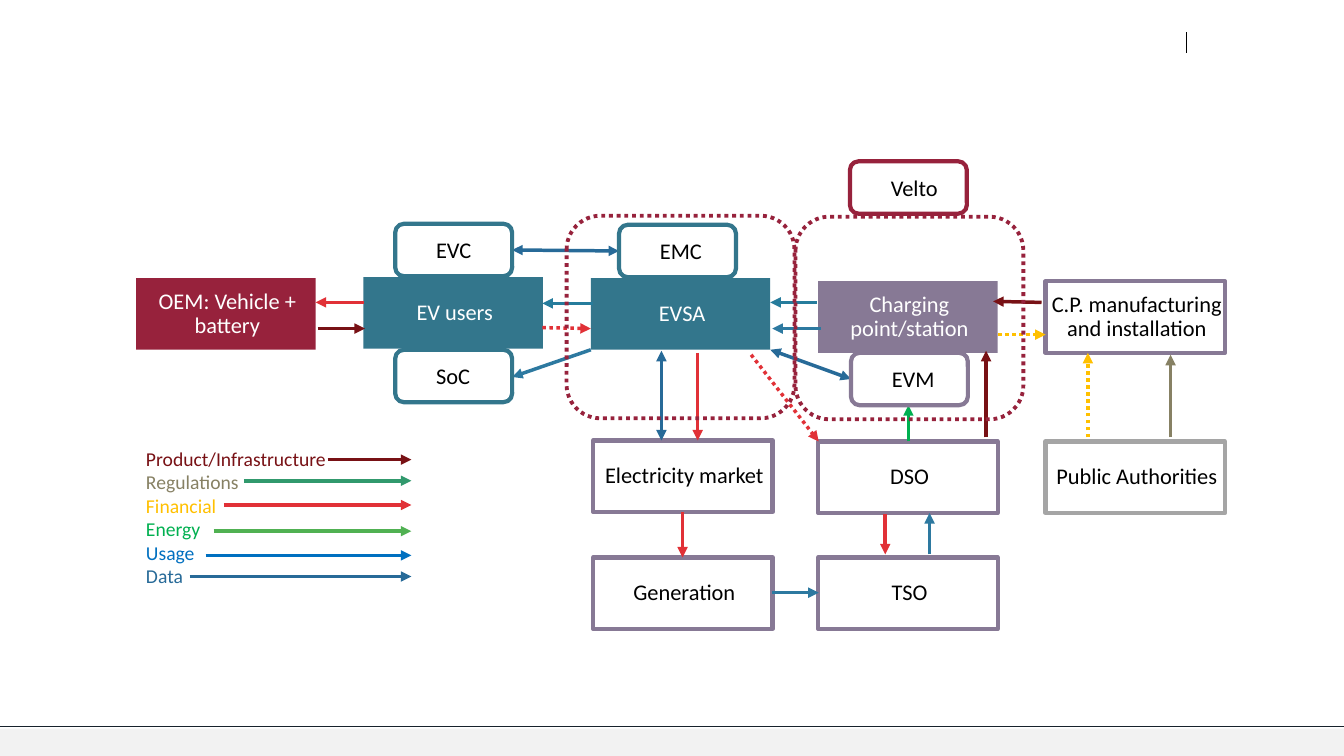
from lxml.etree import SubElement
from pptx import Presentation
from pptx.dml.color import RGBColor
from pptx.enum.dml import MSO_LINE
from pptx.enum.shapes import MSO_CONNECTOR, MSO_SHAPE
from pptx.enum.text import MSO_ANCHOR, MSO_AUTO_SIZE, PP_ALIGN
from pptx.oxml.ns import qn
from pptx.util import Inches, Pt

BLACK = RGBColor(0x00, 0x00, 0x00)
WHITE = RGBColor(0xFF, 0xFF, 0xFF)
PALE = RGBColor(0xF2, 0xF2, 0xF2)
NAVY = RGBColor(0x16, 0x21, 0x2B)
CRIMSON = RGBColor(0x97, 0x22, 0x3C)
TEAL = RGBColor(0x33, 0x76, 0x8C)
PURPLE = RGBColor(0x87, 0x79, 0x95)
GRAY = RGBColor(0xA5, 0xA5, 0xA5)
MAROON = RGBColor(0x78, 0x11, 0x15)
OLIVE = RGBColor(0x87, 0x81, 0x64)
YELLOW = RGBColor(0xFF, 0xC0, 0x00)
RED = RGBColor(0xE1, 0x31, 0x37)
GREEN = RGBColor(0x00, 0xB0, 0x50)
LEAF = RGBColor(0x50, 0xB1, 0x52)
JADE = RGBColor(0x31, 0x99, 0x6D)
BLUE = RGBColor(0x00, 0x70, 0xC0)
DATA_BLUE = RGBColor(0x27, 0x6A, 0x98)
STEEL = RGBColor(0x2D, 0x79, 0xA0)
SEA = RGBColor(0x26, 0x7C, 0x9C)

SLIDE_WIDTH, SLIDE_HEIGHT = Inches(13.33), Inches(7.5)
COLUMNS, ROWS = 133.3, 75
FIRST_ACTOR, ACTOR_PITCH = 13.5, 22.55
ACTOR_WIDTH, ACTOR_HEIGHT = 17.8, 7.1

# (text, place in the row of actors, top, fill, line)
ACTORS = [
    ("OEM: Vehicle + battery", 0, 27.6, CRIMSON, None),
    ("EV users", 1, 27.5, TEAL, None),
    ("EVSA", 2, 27.6, TEAL, None),
    ("Charging point/station", 3, 27.9, PURPLE, None),
    ("C.P. manufacturing and installation", 4, 27.9, None, PURPLE),
    ("Electricity market", 2.01, 43.7, None, PURPLE),
    ("DSO", 3, 43.8, None, PURPLE),
    ("Public Authorities", 4, 43.8, None, GRAY),
    ("Generation", 2.01, 55.3, None, PURPLE),
    ("TSO", 3, 55.3, None, PURPLE),
]
BADGES = [
    ("EVC", 39.2, 22.2, TEAL),
    ("SoC", 39.2, 34.7, TEAL),
    ("EMC", 61.4, 22.3, TEAL),
    ("EVM", 84.4, 35, PURPLE),
    ("Velto", 84.3, 16, CRIMSON),
]
FLOWS = [
    (RED, (36.1, 30), (31.3, 30)),
    (RED, (69.2, 35), (69.2, 43.7)),
    (RED, (67.7, 50.8), (67.7, 55.3)),
    (RED, (87.8, 51), (87.8, 55)),
    (MAROON, (31.5, 32.6), (36.2, 32.6)),
    (MAROON, (103.3, 30), (98.5, 29.9)),
    (MAROON, (97.8, 43.4), (97.8, 34.8)),
    (SEA, (58.8, 30.1), (53.8, 30.1)),
    (SEA, (81, 30), (76.4, 30)),
    (STEEL, (81.4, 32.6), (76.6, 32.6)),
    (STEEL, (58.6, 34.7), (50.8, 37.4)),
    (STEEL, (76.6, 58.8), (81.2, 58.8)),
    (STEEL, (92.2, 55), (92.2, 50.9)),
    (GREEN, (90.1, 43.8), (90.1, 40.2)),
    (OLIVE, (116.1, 43.4), (116.1, 35.2)),
]
DOTTED_FLOWS = [
    (RED, (53.8, 32.5), (58.6, 32.6)),
    (RED, (74.5, 35.2), (81.2, 43.8)),
    (YELLOW, (99, 33.2), (103.7, 33.2)),
    (YELLOW, (107.9, 43.4), (107.9, 35)),
]
EXCHANGES = [
    (DATA_BLUE, (50.8, 24.8), (61.4, 24.9)),
    (DATA_BLUE, (65.6, 43.7), (65.6, 34.8)),
    (DATA_BLUE, (76.4, 34.7), (84.4, 37.6)),
]
# (text, text colour, arrow colour, arrow start, arrow row)
LEGEND = [
    ("Product/Infrastructure", MAROON, MAROON, 32.5, 45.6),
    ("Regulations", OLIVE, JADE, 24.2, 47.7),
    ("Financial", YELLOW, RED, 22.2, 50.1),
    ("Energy", GREEN, LEAF, 21.2, 52.7),
    ("Usage", BLUE, BLUE, 20.4, 55.1),
    ("Data", DATA_BLUE, DATA_BLUE, 18.8, 57.2),
]


class Diagram:
    font_name = "Calibri"
    text_size = Pt(16)
    legend_size = Pt(14)
    outline_width = Pt(3)
    flow_width = Pt(2.5)

    def __init__(self, slide):
        self.slide = slide

    def across(self, columns):
        return round(SLIDE_WIDTH * columns / COLUMNS)

    def down(self, rows):
        return round(SLIDE_HEIGHT * rows / ROWS)

    def frame(self, left, top, width, height):
        return self.across(left), self.down(top), self.across(width), self.down(height)

    def format_runs(self, paragraph, size, color):
        for run in paragraph.runs:
            run.font.name = self.font_name
            run.font.size = size
            run.font.color.rgb = color

    def outline(self, kind, place, fill=None, line=None, width=outline_width):
        shape = self.slide.shapes.add_shape(kind, *self.frame(*place))
        shape.shadow.inherit = False
        if fill is None:
            shape.fill.background()
        else:
            shape.fill.solid()
            shape.fill.fore_color.rgb = fill
        if line is None:
            shape.line.fill.background()
        else:
            shape.line.color.rgb = line
            shape.line.width = width
        return shape

    def label(self, shape, text, color, alignment, left_margin):
        frame = shape.text_frame
        frame.word_wrap = True
        frame.vertical_anchor = MSO_ANCHOR.MIDDLE
        frame.margin_left, frame.margin_right = Inches(left_margin), Inches(0.02)
        frame.margin_top = frame.margin_bottom = Inches(0.04)
        frame.text = text
        paragraph = frame.paragraphs[0]
        paragraph.alignment = alignment
        self.format_runs(paragraph, self.text_size, color)
        return paragraph

    def actor(self, text, position, top, fill, line):
        left = FIRST_ACTOR + ACTOR_PITCH * position
        place = (left, top, ACTOR_WIDTH, ACTOR_HEIGHT)
        shape = self.outline(MSO_SHAPE.RECTANGLE, place, fill, line)
        paragraph = self.label(shape, text, WHITE if fill else BLACK, PP_ALIGN.CENTER, 0.05)
        paragraph.line_spacing = 0.9
        paragraph.space_after = Pt(7)

    def badge(self, text, left, top, line):
        shape = self.outline(MSO_SHAPE.ROUNDED_RECTANGLE, (left, top, 11.6, 5.2), None, line)
        self.label(shape, text, BLACK, PP_ALIGN.LEFT, 0.38)

    def group(self, left, top):
        place = (left, top, 22.6, 20.1)
        shape = self.outline(MSO_SHAPE.ROUNDED_RECTANGLE, place, None, CRIMSON, Pt(2.75))
        shape.line.dash_style = MSO_LINE.ROUND_DOT

    def line(self, color, start, end, width=flow_width, ends=(), dotted=False):
        connector = self.slide.shapes.add_connector(
            MSO_CONNECTOR.STRAIGHT,
            self.across(start[0]), self.down(start[1]),
            self.across(end[0]), self.down(end[1]))
        connector.line.color.rgb = color
        connector.line.width = width
        if dotted:
            connector.line.dash_style = MSO_LINE.ROUND_DOT
        properties = connector.element.spPr
        for end_name in ends:
            SubElement(properties.find(qn("a:ln")), qn(end_name), type="triangle")
        SubElement(properties, qn("a:effectLst"))

    def flow(self, color, start, end, dotted=False):
        self.line(color, start, end, ends=("a:tailEnd",), dotted=dotted)

    def exchange(self, color, start, end):
        self.line(color, start, end, ends=("a:headEnd", "a:tailEnd"))

    def legend(self, entries):
        shape = self.slide.shapes.add_textbox(*self.frame(13.5, 43.8, 20, 15.1))
        frame = shape.text_frame
        frame.word_wrap = True
        frame.auto_size = MSO_AUTO_SIZE.SHAPE_TO_FIT_TEXT
        frame.text = "\n".join(entry[0] for entry in entries)
        for paragraph, entry in zip(frame.paragraphs, entries):
            text, text_color, arrow_color, start, row = entry
            self.format_runs(paragraph, self.legend_size, text_color)
            self.flow(arrow_color, (start, row), (40.8, row))


def main():
    presentation = Presentation()
    presentation.slide_width, presentation.slide_height = SLIDE_WIDTH, SLIDE_HEIGHT
    diagram = Diagram(presentation.slides.add_slide(presentation.slide_layouts[6]))
    diagram.outline(MSO_SHAPE.RECTANGLE, (0, 72.3, COLUMNS, 2.7), PALE)
    diagram.line(NAVY, (0, 72.1), (COLUMNS, 72.1), Pt(1))
    diagram.line(BLACK, (117.7, 3.2), (117.7, 5.3), Pt(1))
    for actor in ACTORS:
        diagram.actor(*actor)
    for flow in FLOWS:
        diagram.flow(*flow)
    for flow in DOTTED_FLOWS:
        diagram.flow(*flow, dotted=True)
    for exchange in EXCHANGES:
        diagram.exchange(*exchange)
    for badge in BADGES:
        diagram.badge(*badge)
    diagram.group(56.2, 21.4)
    diagram.group(78.9, 21.5)
    diagram.legend(LEGEND)
    presentation.save("out.pptx")


if __name__ == "__main__":
    main()
